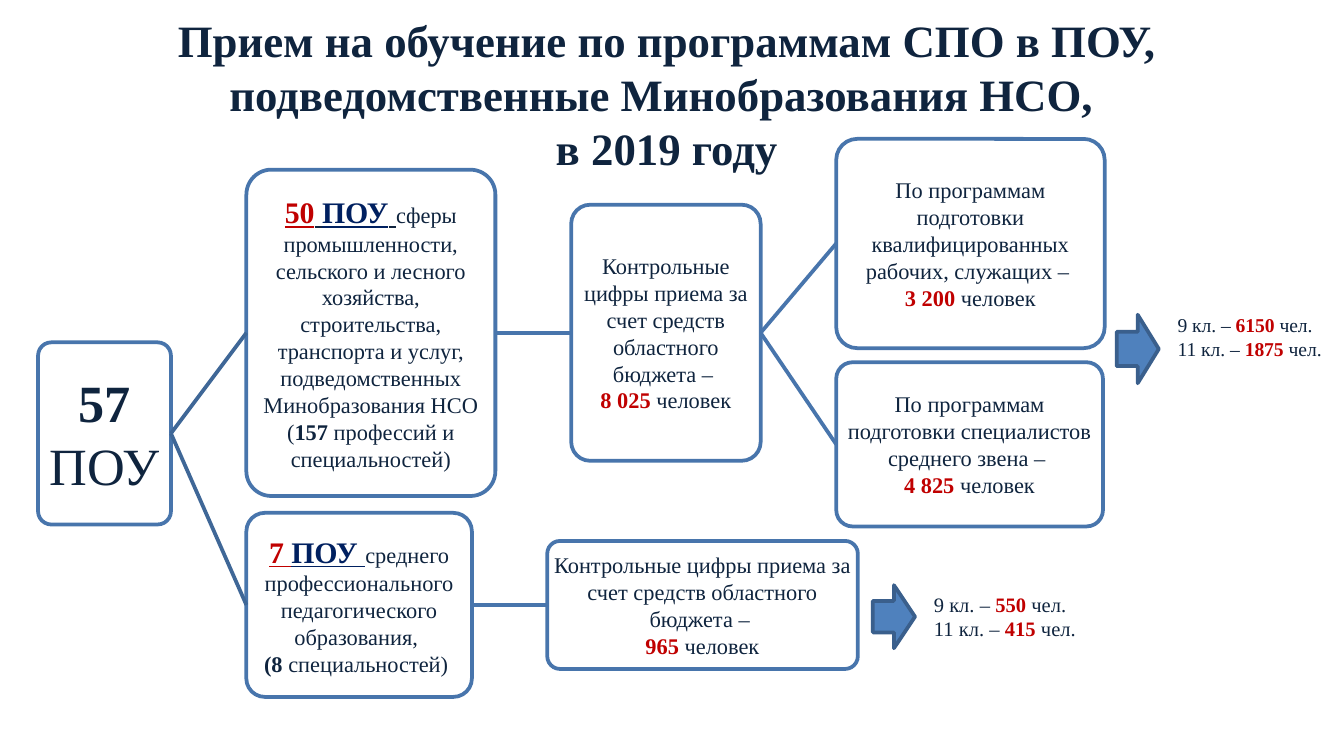
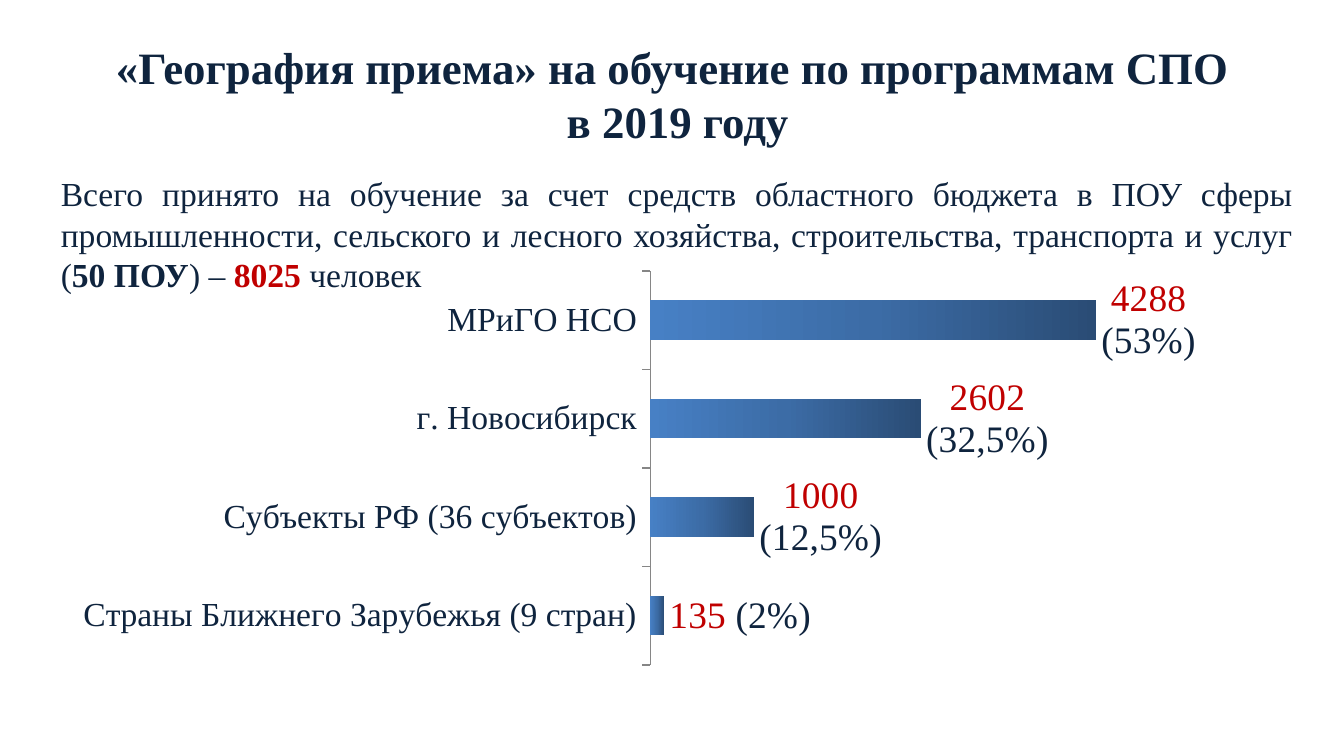
from copy import deepcopy
from dataclasses import dataclass

from lxml.etree import SubElement
from pptx import Presentation
from pptx.chart.data import CategoryChartData
from pptx.dml.color import RGBColor
from pptx.enum.chart import XL_CHART_TYPE as ChartType
from pptx.enum.chart import XL_LABEL_POSITION as LabelPosition
from pptx.enum.chart import XL_TICK_MARK as TickMark
from pptx.enum.shapes import MSO_CONNECTOR as Connector
from pptx.enum.shapes import MSO_SHAPE as Shape
from pptx.enum.text import MSO_ANCHOR as Anchor
from pptx.enum.text import PP_ALIGN as Align
from pptx.oxml import parse_xml
from pptx.oxml.ns import nsdecls, qn
from pptx.util import Pt


@dataclass(frozen=True)
class Theme:
    font: str = "Times New Roman"
    text: str = "0F243E"
    accent: str = "C00000"
    navy: str = "002060"
    box_fill: str = "FFFFFF"
    box_line: str = "4875AC"
    branch_line: str = "3F6797"
    arrow_fill: str = "4F81BD"
    arrow_line: str = "3A5F8C"
    axis_line: str = "868686"
    bar_stops: tuple = ((0, "2A4C75"), (0.5, "3C6CA6"), (1, "4780C5"))
    title_size: float = 24
    total_size: float = 28
    lead_size: float = 16
    box_size: float = 12
    industry_note_size: float = 10.5
    teaching_note_size: float = 11
    body_size: float = 18
    label_size: float = 20
    line_width: float = 2


THEME = Theme()
PLAIN = {}
BOLD = dict(bold=True)
RED = dict(color=THEME.accent)
ACCENT = dict(color=THEME.accent, bold=True)
LEAD_NUMBER = dict(ACCENT, size=THEME.lead_size, underline=True)
LEAD_GAP = dict(LEAD_NUMBER, color=THEME.text)
LEAD_WORD = dict(LEAD_NUMBER, color=THEME.navy)

TITLE_TOP, TITLE_HEIGHT = 16.2, 67.7
RIGHT_SITE, LEFT_SITE = 3, 1


def rgb(color):
    return RGBColor.from_string(color)


def write_run(paragraph, text, *, size, color=THEME.text, bold=False, underline=False):
    for index, line in enumerate(text.split("\n")):
        if index:
            paragraph.add_line_break()
        run = paragraph.add_run()
        run.text = line
        font = run.font
        font.name = THEME.font
        font.size = Pt(size)
        font.bold = bold
        font.underline = underline
        font.color.rgb = rgb(color)


def write_paragraphs(frame, paragraphs, *, size, align=None, anchor=Anchor.TOP, inset=None):
    frame.word_wrap = True
    frame.vertical_anchor = anchor
    if inset is not None:
        frame.margin_left = frame.margin_right = Pt(inset)
        frame.margin_top = frame.margin_bottom = Pt(inset)
    for index, runs in enumerate(paragraphs):
        paragraph = frame.add_paragraph() if index else frame.paragraphs[0]
        paragraph.alignment = align
        for text, style in runs:
            write_run(paragraph, text, **{"size": size, **style})


def add_text(slide, place, paragraphs, **layout):
    box = slide.shapes.add_textbox(*map(Pt, place))
    write_paragraphs(box.text_frame, paragraphs, **layout)


def add_title(slide, left, width, text):
    add_text(slide, (left, TITLE_TOP, width, TITLE_HEIGHT), [[(text, BOLD)]],
             size=THEME.title_size, align=Align.CENTER, anchor=Anchor.MIDDLE)


def add_filled_shape(slide, kind, place, fill, line):
    shape = slide.shapes.add_shape(kind, *map(Pt, place))
    shape.shadow.inherit = False
    shape.fill.solid()
    shape.fill.fore_color.rgb = rgb(fill)
    shape.line.color.rgb = rgb(line)
    shape.line.width = Pt(THEME.line_width)
    return shape


def add_box(slide, place, paragraphs, size=THEME.box_size, inset=0.7):
    shape = add_filled_shape(slide, Shape.ROUNDED_RECTANGLE, place,
                             THEME.box_fill, THEME.box_line)
    shape.adjustments[0] = 0.1
    write_paragraphs(shape.text_frame, paragraphs, size=size, align=Align.CENTER,
                     anchor=Anchor.MIDDLE, inset=inset)
    return shape


def add_quota_box(slide, place, text, count):
    return add_box(slide, place, [[(text, PLAIN)], [(count, ACCENT), (" человек", PLAIN)]])


def add_link(slide, source, target, color=THEME.box_line):
    connector = slide.shapes.add_connector(Connector.STRAIGHT, 0, 0, 0, 0)
    connector.begin_connect(source, RIGHT_SITE)
    connector.end_connect(target, LEFT_SITE)
    connector.line.color.rgb = rgb(color)
    connector.line.width = Pt(THEME.line_width)
    SubElement(connector._element.spPr, qn("a:effectLst"))


def add_arrow(slide, place):
    add_filled_shape(slide, Shape.RIGHT_ARROW, place, THEME.arrow_fill, THEME.arrow_line)


def add_grade_note(slide, place, counts, size):
    paragraphs = [[(f"{grade} кл. – ", PLAIN), (count, ACCENT), (" чел.", PLAIN)]
                  for grade, count in zip((9, 11), counts)]
    add_text(slide, place, paragraphs, size=size)


def set_plot_area(chart, x, y, width, height):
    values = "".join(f'<c:{name} val="{value}"/>' for name, value in
                     zip("xywh", (x, y, width, height)))
    layout = parse_xml(
        f'<c:layout {nsdecls("c")}><c:manualLayout><c:layoutTarget val="inner"/>'
        f'<c:xMode val="edge"/><c:yMode val="edge"/>{values}</c:manualLayout></c:layout>')
    plot_area = chart._chartSpace.chart.plotArea
    for existing in plot_area.findall(qn("c:layout")):
        plot_area.remove(existing)
    plot_area.insert(0, layout)


def fill_bars(chart, series):
    fill = series.format.fill
    fill.gradient()
    fill.gradient_angle = 180
    stop_list = chart._chartSpace.xpath(".//a:gsLst")[0]
    stop_list.append(deepcopy(stop_list[0]))
    for stop, (position, color) in zip(fill.gradient_stops, THEME.bar_stops):
        stop.position = position
        stop.color.rgb = rgb(color)


def label_bars(series, rows):
    labels = series.data_labels
    labels.show_value = True
    labels.position = LabelPosition.OUTSIDE_END
    labels.font.name = THEME.font
    labels.font.size = Pt(THEME.label_size)
    labels.font.bold = True
    labels.font.color.rgb = rgb(THEME.accent)
    for index, (_, value, share) in enumerate(rows):
        label = series.points[index].data_label
        paragraph = label.text_frame.paragraphs[0]
        write_run(paragraph, str(value), size=THEME.label_size, **RED)
        write_run(paragraph, f" ({share})", size=THEME.label_size)
        label.position = LabelPosition.OUTSIDE_END


def add_bar_chart(slide, place, rows):
    data = CategoryChartData(number_format="General")
    data.categories = [category for category, _, _ in rows]
    data.add_series("Series 1", [value for _, value, _ in rows])
    frame = slide.shapes.add_chart(ChartType.BAR_CLUSTERED, *map(Pt, place), data)
    chart = frame.chart
    chart.has_legend = False
    chart.has_title = False
    chart.font.name = THEME.font
    chart.font.size = Pt(THEME.body_size)
    chart.font.color.rgb = rgb(THEME.text)
    set_plot_area(chart, 0.49, 0.05, 0.43, 0.91)

    category_axis = chart.category_axis
    category_axis.major_tick_mark = TickMark.OUTSIDE
    category_axis.has_major_gridlines = False
    category_axis.format.line.color.rgb = rgb(THEME.axis_line)
    value_axis = chart.value_axis
    value_axis.visible = False
    value_axis.has_major_gridlines = False
    value_axis.minimum_scale = 0
    value_axis.maximum_scale = 5000

    plot = chart.plots[0]
    plot.gap_width = 150
    plot.vary_by_categories = False
    series = plot.series[0]
    series.invert_if_negative = False
    fill_bars(chart, series)
    label_bars(series, rows)


def build_admission_slide(slide):
    add_title(slide, 14, 686.2,
              "Прием на обучение по программам СПО в ПОУ, "
              "подведомственные Минобразования НСО, \nв 2019 году")

    total = add_box(slide, (20.4, 183.4, 71.2, 97.6), [[("57", BOLD), (" ПОУ", PLAIN)]],
                    size=THEME.total_size, inset=1.4)
    industry = add_box(slide, (132, 90.9, 133.4, 174.8), [[
        ("50", LEAD_NUMBER), (" ", LEAD_GAP), ("ПОУ", LEAD_WORD), (" ", LEAD_GAP),
        ("сферы промышленности, сельского и лесного хозяйства, строительства, "
         "транспорта и услуг, подведомственных Минобразования НСО (", PLAIN),
        ("157", BOLD), (" профессий и специальностей)", PLAIN)]])
    teaching = add_box(slide, (132, 274.8, 120.8, 98.6), [
        [("7 ", LEAD_NUMBER), ("ПОУ ", LEAD_WORD),
         ("среднего профессионального педагогического образования, ", PLAIN)],
        [("(8", BOLD), (" специальностей) ", PLAIN)]])

    budget_text = "Контрольные цифры приема за счет средств областного бюджета – "
    industry_quota = add_quota_box(slide, (306, 109.7, 101.5, 137.2), budget_text, "8 025")
    teaching_quota = add_quota_box(slide, (293.2, 289.8, 166.4, 68.6), budget_text, "965")
    workers = add_quota_box(
        slide, (448, 74.4, 143.8, 112.1),
        "По программам подготовки квалифицированных рабочих, служащих – ", "3 200")
    specialists = add_quota_box(
        slide, (448, 194.1, 142.9, 88),
        "По программам подготовки специалистов среднего звена – ", "4 825")

    for branch in (industry, teaching):
        add_link(slide, total, branch, THEME.branch_line)
    for source, target in ((industry, industry_quota), (teaching, teaching_quota),
                           (industry_quota, workers), (industry_quota, specialists)):
        add_link(slide, source, target)

    add_arrow(slide, (598.2, 168.6, 22.6, 36.7))
    add_grade_note(slide, (623.8, 164.2, 94, 32.4), ("6150", "1875"),
                   THEME.industry_note_size)
    add_arrow(slide, (467.6, 313.5, 22.6, 33.8))
    add_grade_note(slide, (493.2, 313.5, 92, 33.8), ("550", "415"),
                   THEME.teaching_note_size)


def build_geography_slide(slide):
    add_title(slide, 36, 648,
              "«География приема» на обучение по программам СПО\n в 2019 году")
    add_bar_chart(slide, (30.8, 133.6, 648, 232), [
        ("Страны Ближнего Зарубежья (9 стран)", 135, "2%"),
        ("Субъекты РФ (36 субъектов)", 1000, "12,5%"),
        ("г. Новосибирск", 2602, "32,5%"),
        ("МРиГО НСО", 4288, "53%")])
    add_text(slide, (25.5, 89.2, 674.6, 72.7), [[
        ("Всего принято на обучение за счет средств областного бюджета в ПОУ сферы "
         "промышленности, сельского и лесного хозяйства, строительства, "
         "транспорта и услуг (", PLAIN),
        ("50 ПОУ", BOLD), (") – ", PLAIN), ("8025", ACCENT), (" человек", PLAIN)]],
        size=THEME.body_size, align=Align.JUSTIFY)


def main():
    presentation = Presentation()
    presentation.slide_width = Pt(720)
    presentation.slide_height = Pt(405)
    blank = presentation.slide_layouts[6]
    for build in (build_admission_slide, build_geography_slide):
        build(presentation.slides.add_slide(blank))
    presentation.save("out.pptx")


if __name__ == "__main__":
    main()
